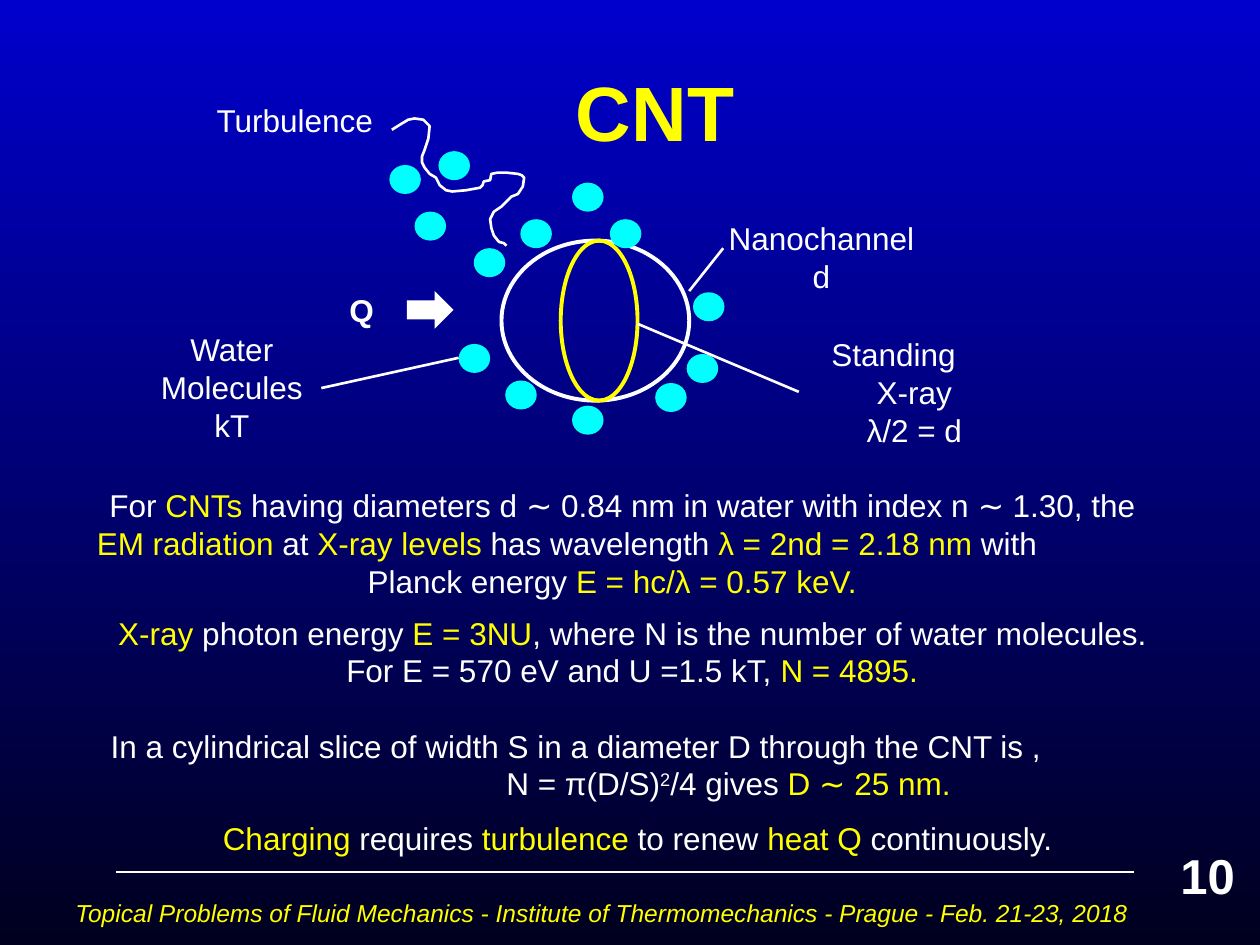
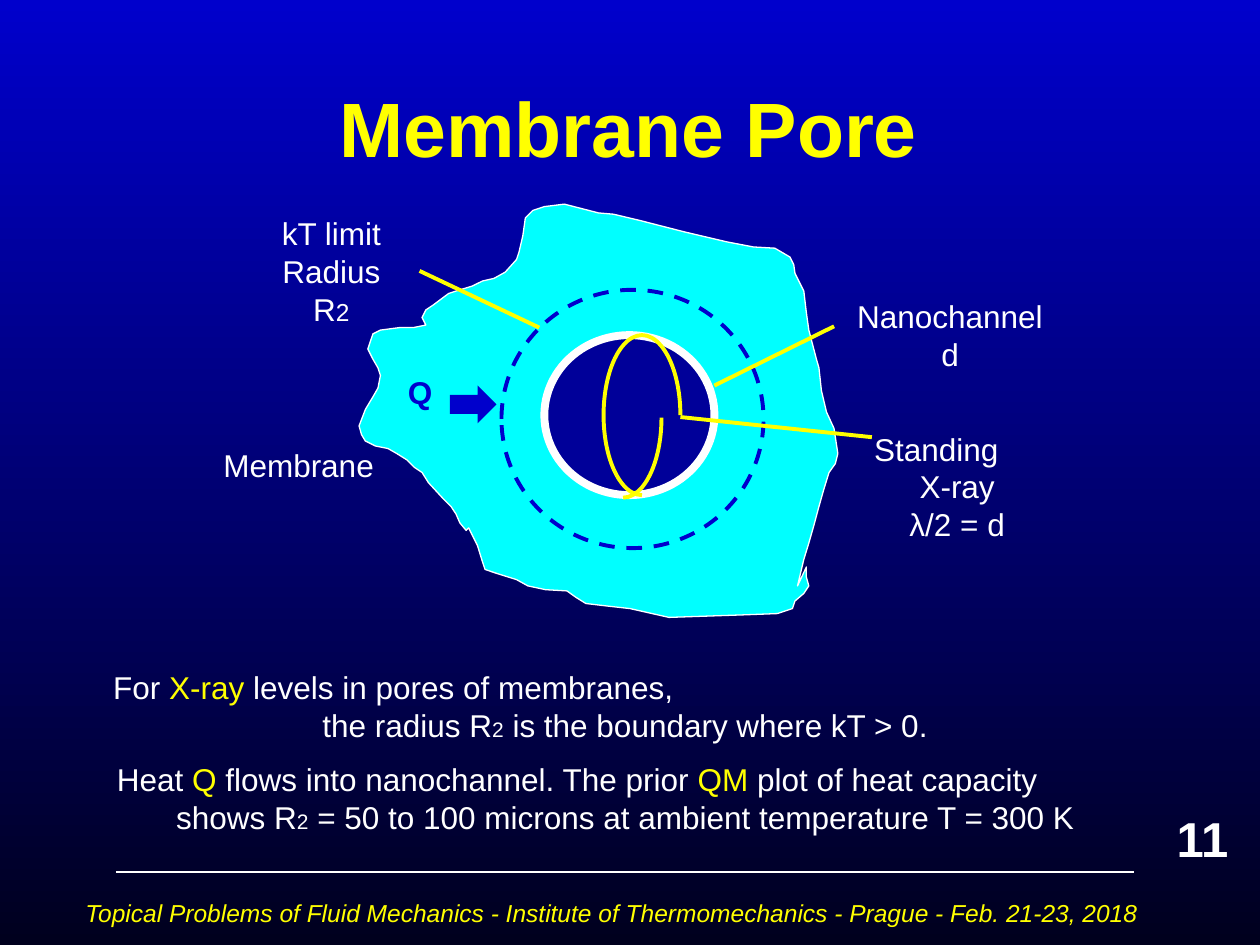
from collections import namedtuple
from dataclasses import dataclass

from lxml import etree
from pptx import Presentation
from pptx.dml.color import RGBColor
from pptx.enum.dml import MSO_LINE
from pptx.enum.shapes import MSO_CONNECTOR, MSO_SHAPE
from pptx.enum.text import MSO_ANCHOR, PP_ALIGN
from pptx.oxml.ns import qn
from pptx.util import Inches, Pt

ELLIPSE = MSO_SHAPE.OVAL
ARC = MSO_SHAPE.ARC
RIGHT_ARROW = MSO_SHAPE.RIGHT_ARROW
STRAIGHT = MSO_CONNECTOR.STRAIGHT
DASH = MSO_LINE.DASH
CENTER = PP_ALIGN.CENTER
LEFT = PP_ALIGN.LEFT
MIDDLE = MSO_ANCHOR.MIDDLE
TOP = MSO_ANCHOR.TOP


@dataclass(frozen=True)
class Theme:
    font: str = "Arial"
    white: str = "FFFFFF"
    yellow: str = "FFFF00"
    cyan: str = "00FFFF"
    blue: str = "0000CC"
    pore: str = "000099"
    night: str = "00001E"
    title_size: int = 44
    number_size: int = 28
    body_size: int = 18
    footer_size: int = 14
    subscript_size: int = 12


theme = Theme()
WHITE, YELLOW = theme.white, theme.yellow
Run = namedtuple(
    "Run", "text color size bold italic raised",
    defaults=(WHITE, theme.body_size, False, False, False),
)
Line = namedtuple("Line", "runs indent space_before", defaults=(None, 0))


def add_text(slide, box, lines, anchor=TOP):
    shape = slide.shapes.add_textbox(*map(Inches, box))
    frame = shape.text_frame
    frame.word_wrap = True
    frame.vertical_anchor = anchor
    for index, line in enumerate(lines):
        paragraph = frame.paragraphs[0] if index == 0 else frame.add_paragraph()
        paragraph.alignment = CENTER if line.indent is None else LEFT
        paragraph.space_before = Pt(line.space_before)
        if line.indent:
            paragraph._p.get_or_add_pPr().set("marL", str(Inches(line.indent)))
        for item in line.runs:
            run = paragraph.add_run()
            run.text = item.text
            run.font.name = theme.font
            run.font.size = Pt(item.size)
            run.font.bold = item.bold
            run.font.italic = item.italic
            run.font.color.rgb = RGBColor.from_string(item.color)
            if item.raised:
                run.font._element.set("baseline", "30000")


def paint(shape, fill=None, line=None, width=0):
    shape.shadow.inherit = False
    if fill:
        shape.fill.solid()
        shape.fill.fore_color.rgb = RGBColor.from_string(fill)
    else:
        shape.fill.background()
    if line:
        shape.line.color.rgb = RGBColor.from_string(line)
        shape.line.width = Pt(width)
    else:
        shape.line.fill.background()


turbulence = [
    (3.11, 1.03), (3.19, 0.98), (3.24, 0.95), (3.29, 0.94), (3.36, 0.95), (3.41, 1),
    (3.4, 1.1), (3.37, 1.19), (3.35, 1.24), (3.35, 1.29), (3.37, 1.33), (3.41, 1.38),
    (3.46, 1.41), (3.49, 1.47), (3.54, 1.51), (3.59, 1.52), (3.7, 1.51), (3.81, 1.49),
    (3.83, 1.47), (3.84, 1.44), (3.89, 1.43), (3.9, 1.38), (3.95, 1.37), (4.02, 1.37),
    (4.11, 1.38), (4.14, 1.39), (4.16, 1.41), (4.15, 1.48), (4.11, 1.54), (4.06, 1.56),
    (3.98, 1.64), (3.92, 1.68), (3.89, 1.74), (3.9, 1.81), (3.92, 1.87), (3.96, 1.92),
    (4, 1.93), (4.02, 1.95),
]
membrane = [
    (6.33, 4.65), (6.38, 4.44), (6.42, 4.31), (6.46, 4.17), (6.5, 4.02), (6.54, 3.88),
    (6.58, 3.75), (6.63, 3.68), (6.65, 3.6), (6.62, 3.4), (6.56, 3.27), (6.52, 3.1),
    (6.5, 2.92), (6.48, 2.85), (6.42, 2.62), (6.4, 2.48), (6.38, 2.31), (6.31, 2.17),
    (6.3, 2.1), (6.27, 2.04), (6.15, 1.97), (5.98, 1.96), (5.77, 1.92), (5.43, 1.84),
    (5.08, 1.75), (4.87, 1.7), (4.75, 1.69), (4.48, 1.62), (4.32, 1.64), (4.23, 1.67),
    (4.17, 1.73), (4.15, 1.87), (4.12, 2), (4.1, 2.06), (4.01, 2.16), (3.92, 2.21),
    (3.83, 2.23), (3.75, 2.27), (3.62, 2.31), (3.56, 2.33), (3.44, 2.42), (3.38, 2.46),
    (3.35, 2.52), (3.38, 2.58), (3.28, 2.6), (3.17, 2.6), (3.02, 2.62), (2.96, 2.65),
    (2.92, 2.77), (2.96, 2.85), (3, 2.92), (3.02, 2.98), (3, 3.08), (2.96, 3.15),
    (2.9, 3.25), (2.85, 3.38), (2.87, 3.45), (2.9, 3.5), (2.98, 3.54), (3.08, 3.56),
    (3.15, 3.6), (3.23, 3.65), (3.29, 3.71), (3.35, 3.75), (3.4, 3.83), (3.52, 3.96),
    (3.58, 4.02), (3.62, 4.08), (3.65, 4.15), (3.7, 4.21), (3.72, 4.19), (3.79, 4.33),
    (3.83, 4.46), (3.85, 4.52), (3.94, 4.55), (4.1, 4.6), (4.19, 4.65), (4.33, 4.68),
    (4.5, 4.69), (4.57, 4.74), (4.65, 4.79), (4.82, 4.81), (5, 4.83), (5.31, 4.9),
    (5.9, 4.88), (6.17, 4.87), (6.29, 4.83), (6.31, 4.77), (6.38, 4.71), (6.42, 4.65),
    (6.4, 4.58), (6.4, 4.5),
]

molecules = [
    (5.45, 2.81), (4.54, 1.45), (3.76, 1.97), (3.64, 2.73), (4.84, 1.74), (4.01, 3.02),
    (4.54, 3.22), (5.5, 2.32), (4.13, 1.74), (5.2, 3.04), (3.09, 1.31), (3.29, 1.68),
    (3.48, 1.2),
]
nanochannel = [Line([Run("Nanochannel")]), Line([Run("d")])]
standing_wave = [
    Line([Run("Standing")], 0.16),
    Line([Run("X-ray")], 0.52),
    Line([Run("λ/2 = d")], 0.44),
]
subscript = Run("2", size=theme.subscript_size)

wavelength_text = [
    Line([Run("For "), Run("CNTs", YELLOW),
          Run(" having diameters d ∼ 0.84 nm in water with index n ∼ 1.30, the")], 0.12),
    Line([Run("EM radiation ", YELLOW), Run("at "), Run("X-ray levels ", YELLOW),
          Run("has wavelength "), Run("λ = 2nd = 2.18 nm ", YELLOW), Run("with")], 0.02),
    Line([Run("Planck energy "), Run("E = hc/λ = 0.57 keV.", YELLOW)], 2.17),
]
charging_text = [
    Line([Run("X-ray ", YELLOW), Run("photon energy "), Run("E = 3NU", YELLOW),
          Run(", where N is the number of water molecules.")], 0.07),
    Line([Run("For E = 570 eV and U =1.5 kT, "), Run("N = 4895.", YELLOW)], 1.88),
    Line([Run("In a cylindrical slice of width S in a diameter D through the CNT is ,")],
         0.01, 21.4),
    Line([Run("N = π(D/S)"), Run("2", raised=True), Run("/4 gives "),
          Run("D ∼ 25 nm.", YELLOW)], 3.15),
    Line([Run("Charging", YELLOW), Run(" requires "), Run("turbulence", YELLOW),
          Run(" to renew "), Run("heat Q ", YELLOW), Run("continuously.")], 0.9, 9.5),
]
membrane_text = [
    Line([Run("For "), Run("X-ray ", YELLOW), Run("levels in pores of membranes,")], 0.14),
    Line([Run("the radius R"), subscript, Run(" is the boundary where kT > 0.")], 1.8),
    Line([Run("Heat "), Run("Q", YELLOW), Run(" flows into nanochannel. The prior "),
          Run("QM", YELLOW), Run(" plot of heat capacity")], 0.17, 9.5),
    Line([Run("shows R"), subscript,
          Run(" = 50 to 100 microns at ambient temperature T = 300 K")], 0.64),
]

slides = [
    {
        "title": ("CNT", 0.95, 0.25),
        "footer_left": 0.5,
        "number": ("10", 9.27, 6.66),
        "outline": (turbulence, False, None, WHITE, 1.5),
        "shapes": [
            (ELLIPSE, (3.98, 1.91, 1.49, 1.27), None, WHITE, 2.25),
            (ELLIPSE, (4.45, 1.91, 0.61, 1.27), None, YELLOW, 2.25),
            (RIGHT_ARROW, (3.23, 2.31, 0.37, 0.3), WHITE, None, 0),
        ] + [(ELLIPSE, (left, top, 0.25, 0.23), theme.cyan, None, 0)
             for left, top in molecules],
        "arcs": [],
        "leaders": [(6.34, 3.11, 5.06, 2.57), (5.74, 1.97, 5.47, 2.31),
                    (2.55, 3.08, 3.64, 2.84)],
        "leader_style": (WHITE, 1.5),
        "texts": [
            ((2.55, 2.26, 0.64, 0.4), [Line([Run("Q", bold=True)])]),
            ((6.34, 2.61, 1.84, 1.01), standing_wave),
            ((5.6, 1.69, 1.84, 0.71), nanochannel),
            ((1.13, 2.57, 1.42, 1.01),
             [Line([Run(word)]) for word in ("Water", "Molecules", "kT")]),
            ((1.42, 0.75, 1.84, 0.4), [Line([Run("Turbulence")])]),
            ((0.65, 3.81, 8.8, 1.01), wavelength_text),
            ((0.77, 4.82, 8.7, 2.05), charging_text),
        ],
    },
    {
        "title": ("Membrane Pore", 0.74, 0.38),
        "footer_left": 0.58,
        "number": ("11", 9.24, 6.37),
        "outline": (membrane, True, theme.cyan, WHITE, 0.75),
        "shapes": [
            (ELLIPSE, (3.98, 2.3, 2.08, 2.05), theme.cyan, theme.blue, 2.25),
            (ELLIPSE, (4.32, 2.66, 1.35, 1.27), theme.pore, WHITE, 4.5),
            (RIGHT_ARROW, (3.57, 3.06, 0.37, 0.3), theme.blue, None, 0),
        ],
        "arcs": [((4.79, 2.66, 0.61, 1.27), 90, -90),
                 ((4.64, 2.68, 0.61, 1.27), -90, 90)],
        "leaders": [(6.92, 3.47, 5.4, 3.31), (6.62, 2.59, 5.67, 3.06),
                    (3.33, 2.15, 4.28, 2.6)],
        "leader_style": (YELLOW, 2.25),
        "texts": [
            ((2.9, 2.91, 0.87, 0.4), [Line([Run("Q", theme.blue, bold=True)])]),
            ((6.68, 3.36, 1.84, 1.01), standing_wave),
            ((6.62, 2.31, 1.84, 0.71), nanochannel),
            ((1.66, 3.49, 1.42, 0.4), [Line([Run("Membrane")])]),
            ((0.66, 5.25, 8.8, 1.45), membrane_text),
            ((1.92, 1.65, 1.42, 1.01),
             [Line([Run("kT limit")]), Line([Run("Radius")]),
              Line([Run("R"), Run("2", size=theme.footer_size)])]),
        ],
    },
]
footer = "Topical Problems of Fluid Mechanics - Institute of Thermomechanics - Prague - Feb. 21-23, 2018"

presentation = Presentation()
presentation.slide_width = Inches(10)
presentation.slide_height = Inches(7.5)

for content in slides:
    slide = presentation.slides.add_slide(presentation.slide_layouts[6])
    background = slide.background.fill
    background.gradient()
    background.gradient_angle = 270
    for stop, color in zip(background.gradient_stops, (theme.blue, theme.night)):
        stop.color.rgb = RGBColor.from_string(color)

    points, closed, fill, line, width = content["outline"]
    points = [(Inches(x), Inches(y)) for x, y in points]
    builder = slide.shapes.build_freeform(*points[0])
    builder.add_line_segments(points[1:], close=closed)
    paint(builder.convert_to_shape(), fill, line, width)

    for preset, box, fill, line, width in content["shapes"]:
        shape = slide.shapes.add_shape(preset, *map(Inches, box))
        paint(shape, fill, line, width)
        if line == theme.blue:
            shape.line.dash_style = DASH

    for box, start, end in content["arcs"]:
        arc = slide.shapes.add_shape(ARC, *map(Inches, box))
        arc.adjustments[0] = start * 0.6
        arc.adjustments[1] = end * 0.6
        paint(arc, None, YELLOW, 2.25)

    connectors = [(leader, *content["leader_style"]) for leader in content["leaders"]]
    connectors.append(((0.92, 6.92, 9, 6.92), WHITE, 0.75))
    for ends, color, width in connectors:
        connector = slide.shapes.add_connector(STRAIGHT, *map(Inches, ends))
        connector.line.color.rgb = RGBColor.from_string(color)
        connector.line.width = Pt(width)
        etree.SubElement(connector._element.spPr, qn("a:effectLst"))

    title, left, top = content["title"]
    add_text(slide, (left, top, 8.5, 1.25),
             [Line([Run(title, YELLOW, theme.title_size, bold=True)])], MIDDLE)
    for box, lines in content["texts"]:
        add_text(slide, box, lines)
    add_text(slide, (content["footer_left"], 7.08, 9, 0.42),
             [Line([Run(footer, YELLOW, theme.footer_size, italic=True)], 0)])
    number, left, top = content["number"]
    add_text(slide, (left, top, 0.75, 0.57),
             [Line([Run(number, WHITE, theme.number_size, bold=True)], 0)])

presentation.save("out.pptx")
